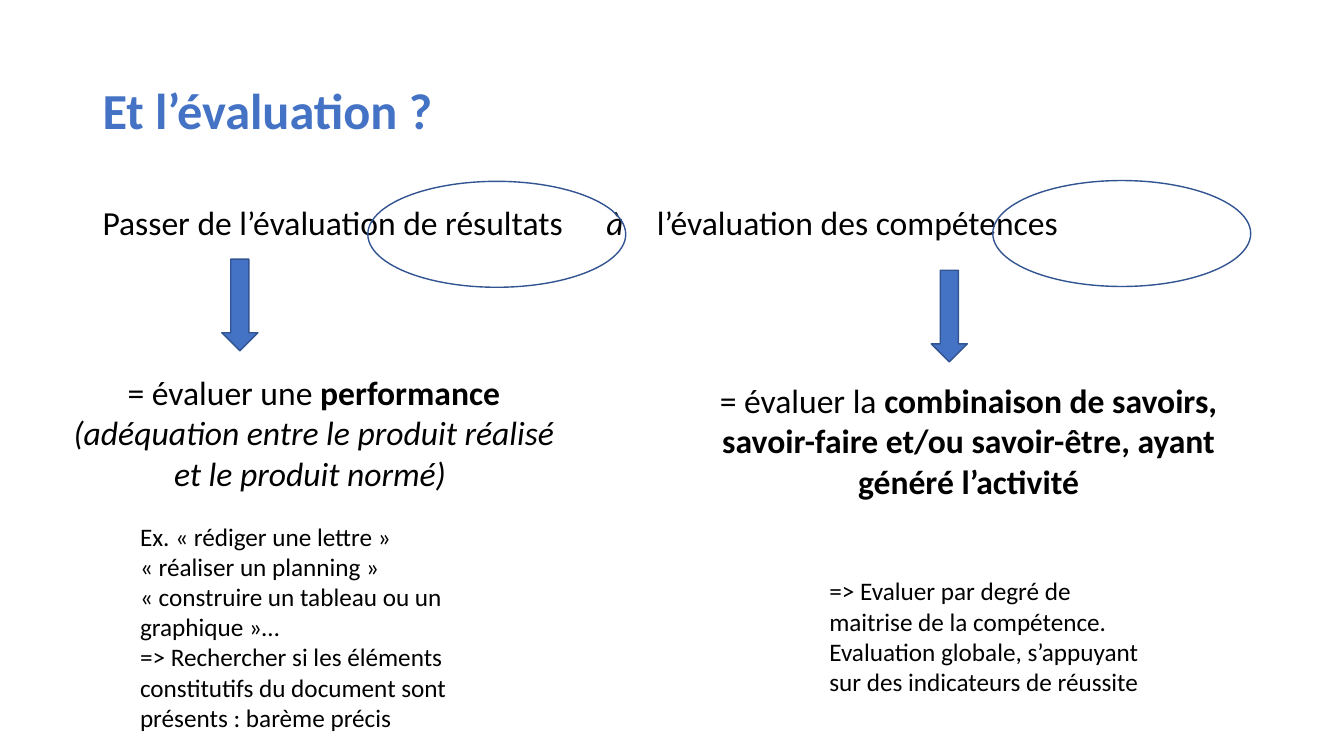
from lxml.etree import SubElement as Sub
from pptx import Presentation
from pptx.dml.color import RGBColor
from pptx.enum.shapes import MSO_SHAPE as Kind
from pptx.enum.text import MSO_ANCHOR as Anchor, MSO_AUTO_SIZE as Fit, PP_ALIGN as Align
from pptx.oxml.ns import qn
from pptx.util import Cm, Pt

BLUE, EDGE, BLACK = "4472C4", "325491", "000000"
BOLD, ITAL, PLAIN = {"bold": True}, {"italic": True}, {}

# Content: each paragraph is a list of (text, format) runs
TITLE = [[("Et l’évaluation ?", BOLD)]]
SHIFT = [[("Passer de l’évaluation de résultats", PLAIN), ("\tà\t", ITAL),
          ("l’évaluation des compétences", PLAIN)]]
TABS = (14.22, 17.77)
GOALS = [
    ((1.32, 9.25, 13.18, 3.33),
     [[("= évaluer une ", PLAIN), ("performance ", BOLD),
       ("(adéquation entre le produit réalisé et le produit normé) ", ITAL)]]),
    ((17.3, 9.45, 14.22, 3.33),
     [[("= évaluer la ", PLAIN),
       ("combinaison de savoirs, savoir-faire et/ou savoir-être, "
        "ayant généré l’activité", BOLD)]]),
]
NOTES = [
    ((3.28, 13, 8.71, 5.64),
     [[(line, PLAIN)] for line in (
         "Ex. « rédiger une lettre »",
         "« réaliser un planning »",
         "« construire un tableau ou un graphique »…",
         "=> Rechercher si les éléments constitutifs du document "
         "sont présents : barème précis")]),
    ((20.65, 14.38, 8.71, 3.33),
     [[("=> Evaluer par degré de maitrise de la compétence. Evaluation globale, "
        "s’appuyant sur des indicateurs de réussite", PLAIN)]]),
]
RINGS = [(9.27, 4.57), (25.02, 4.55)]
ARROWS = [(5.59, 6.53), (23.47, 6.81)]


def color(code):
    return RGBColor.from_string(code)


def place(shape, box):
    for name, size in zip(("left", "top", "width", "height"), box):
        setattr(shape, name, Cm(size))


def write(shape, paras, size, ink=BLACK, fit=Fit.NONE, **style):
    frame = shape.text_frame
    frame.word_wrap = True
    frame.auto_size = fit
    for i, runs in enumerate(paras):
        para = frame.add_paragraph() if i else frame.paragraphs[0]
        for name, value in style.items():
            setattr(para, name, value)
        for text, form in runs:
            run = para.add_run()
            run.text = text
            run.font.color.rgb = color(ink)
            for name, value in {"name": "Calibri", "size": Pt(size), **form}.items():
                setattr(run.font, name, value)


def draw(kind, box, fill=None):
    shape = slide.shapes.add_shape(kind, *map(Cm, box))
    shape.shadow.inherit = False
    if fill:
        shape.fill.solid()
        shape.fill.fore_color.rgb = color(fill)
    else:
        shape.fill.background()
    shape.line.color.rgb = color(EDGE)
    shape.line.width = Pt(1)


deck = Presentation()
deck.slide_width, deck.slide_height = Cm(33.87), Cm(19.05)
slide = deck.slides.add_slide(deck.slide_layouts[1])

# Title and the sentence below it
title, body = slide.placeholders
place(title, (2.33, 1.01, 29.21, 3.68))
write(title, TITLE, 36, BLUE, alignment=Align.LEFT, line_spacing=0.9)
title.text_frame.vertical_anchor = Anchor.MIDDLE
place(body, (2.33, 5.08, 29.21, 2.67))
write(body, SHIFT, 24, line_spacing=0.9, space_before=Pt(10))

# No bullet; tab stops set the columns of the sentence
props = body.text_frame.paragraphs[0]._p.get_or_add_pPr()
props.set("marL", "0")
props.set("indent", "0")
Sub(props, qn("a:buNone"))
stops = Sub(props, qn("a:tabLst"))
for stop in TABS:
    Sub(stops, qn("a:tab"), pos=str(Cm(stop)), algn="l")

# Goals and notes under each half
for group, size, align in ((GOALS, 24, Align.CENTER), (NOTES, 18, Align.LEFT)):
    for box, paras in group:
        area = slide.shapes.add_textbox(*map(Cm, box))
        write(area, paras, size, fit=Fit.SHAPE_TO_FIT_TEXT, alignment=align)

# Rings around the key words, arrows down to the goals
for spot in RINGS:
    draw(Kind.OVAL, (*spot, 6.5, 2.67))
for spot in ARROWS:
    draw(Kind.DOWN_ARROW, (*spot, 0.91, 2.31), BLUE)

deck.save("out.pptx")
